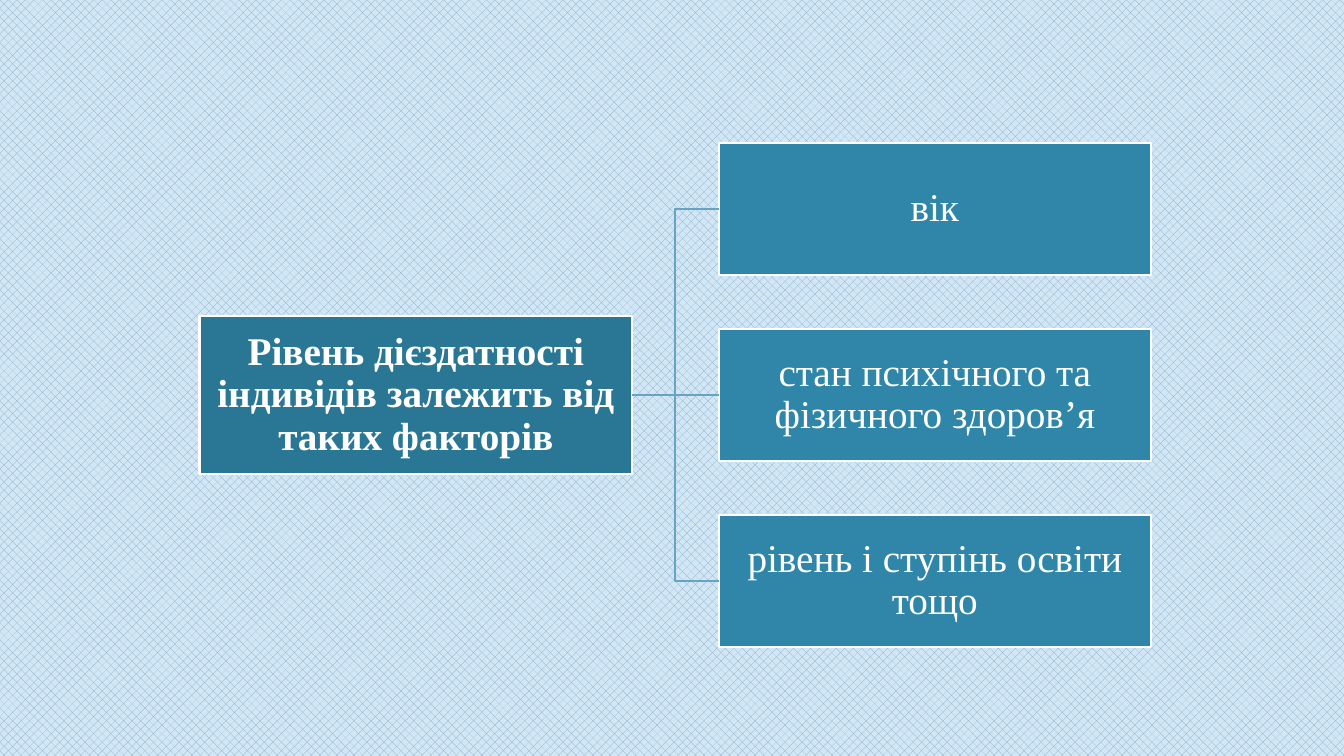
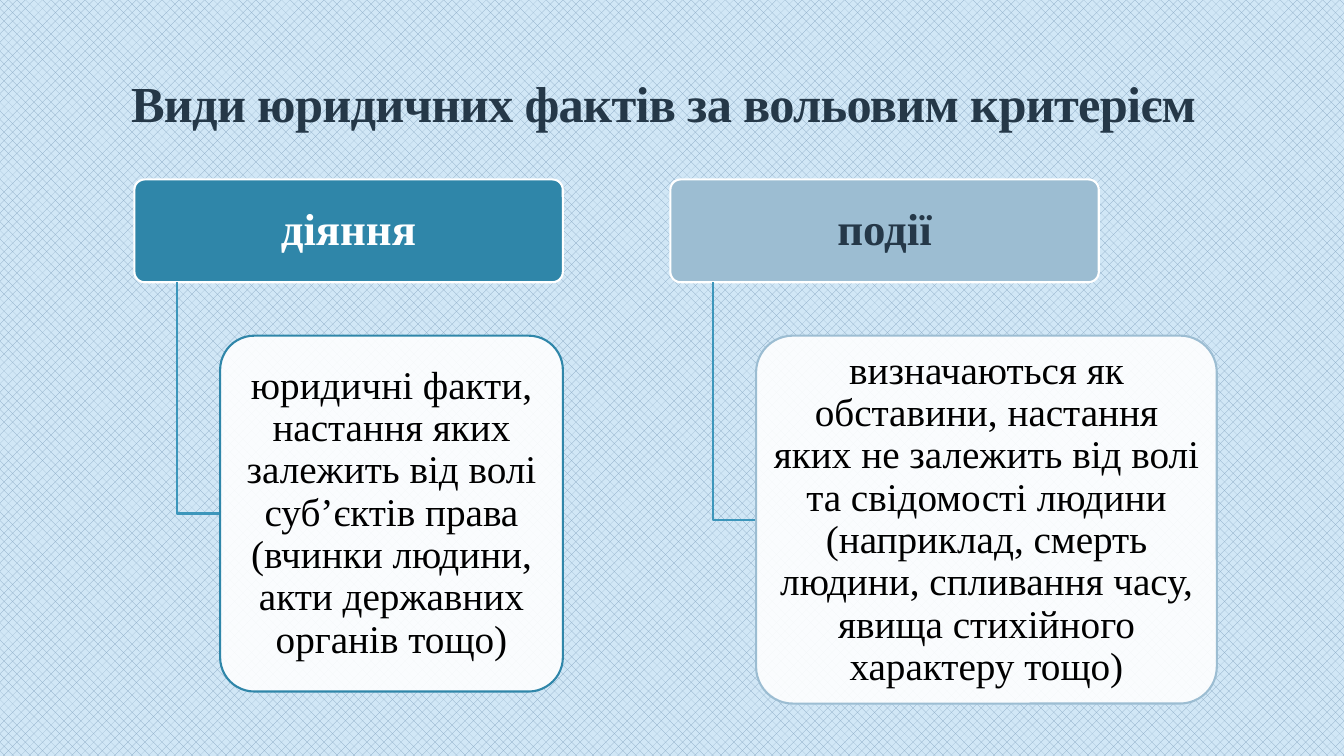
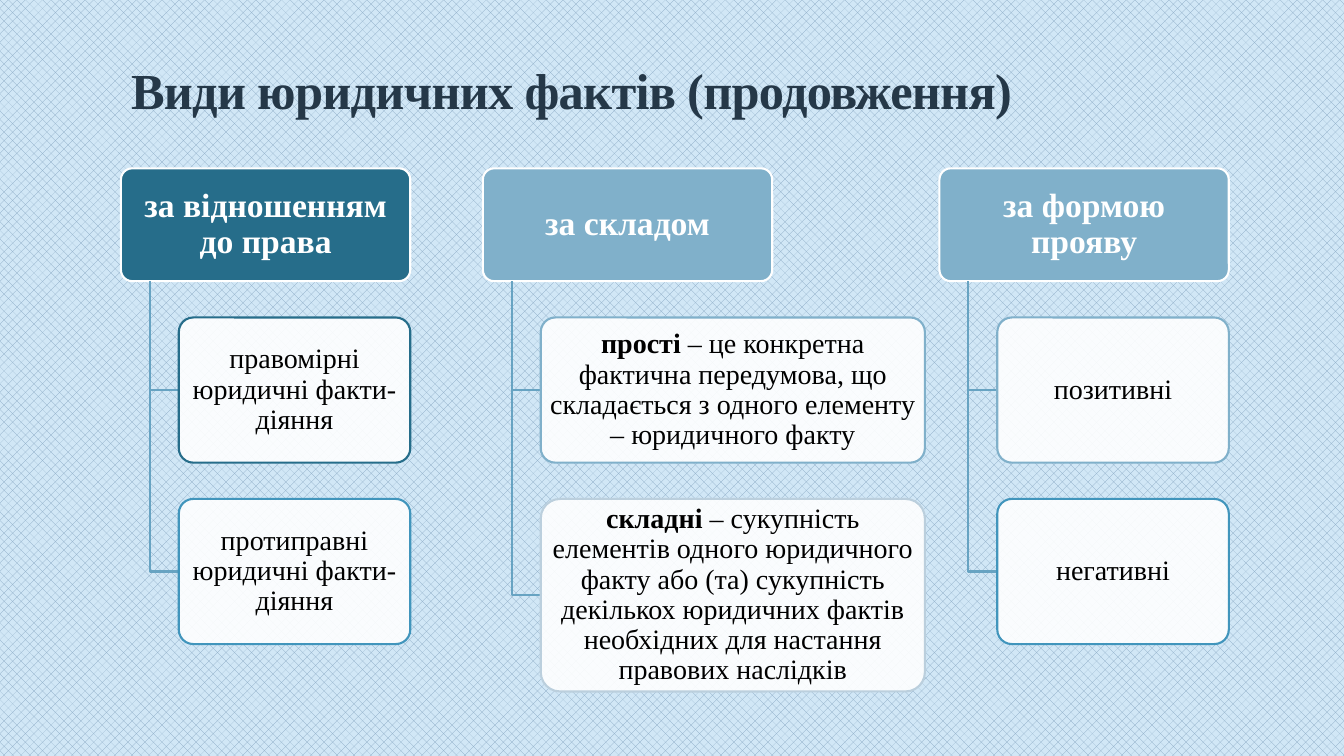
import dataclasses

import pptx
import pptx.dml.color
import pptx.enum.dml
import pptx.enum.shapes
import pptx.enum.text
import pptx.oxml
import pptx.oxml.ns
import pptx.util

RECTANGLE = pptx.enum.shapes.MSO_SHAPE.RECTANGLE
ROUNDED = pptx.enum.shapes.MSO_SHAPE.ROUNDED_RECTANGLE
CONNECTOR = pptx.enum.shapes.MSO_CONNECTOR


@dataclasses.dataclass(frozen=True)
class Theme:
    font: str = "Times New Roman"
    title_size: int = 36
    heading_size: int = 32
    text_size: int = 28
    subheading_size: int = 24
    small_size: int = 20
    line_width: float = 1.5
    white: str = "FFFFFF"
    black: str = "000000"
    ink: str = "253848"
    background: str = "D1E7F6"
    hatch: str = "86A6C1"
    root: str = "2A7795"
    teal: str = "2F86A9"
    deep_teal: str = "266D8A"
    mist: str = "9CBDD2"
    sky: str = "80B0CA"
    azure: str = "4195BC"
    pale: str = "BBCFDD"
    link: str = "67A3C2"
    strong_link: str = "3C96BB"


THEME = Theme()
SLIDE_WIDTH = pptx.util.Inches(13.33)
SLIDE_HEIGHT = pptx.util.Inches(7.5)


@dataclasses.dataclass(frozen=True)
class Box:
    """A region in percent of the slide's width and height."""
    left: float
    top: float
    width: float
    height: float

    def emu(self):
        return (across(self.left), down(self.top),
                across(self.width), down(self.height))


@dataclasses.dataclass(frozen=True)
class Leaf:
    text: str
    line: str
    height: float
    width: float = 0  # 0 means 80 % of the heading's width
    lead: str = ""    # bold opening words


def across(percent):
    return round(SLIDE_WIDTH * percent / 100)


def down(percent):
    return round(SLIDE_HEIGHT * percent / 100)


def color(value):
    return pptx.dml.color.RGBColor.from_string(value)


def format_run(run, size, font_color, bold=False):
    run.font.name = THEME.font
    run.font.size = pptx.util.Pt(size)
    run.font.color.rgb = color(font_color)
    run.font.bold = bold


def style_line(shape, line_color):
    shape.line.color.rgb = color(line_color)
    shape.line.width = pptx.util.Pt(THEME.line_width)


def add_node(slide, kind, box, text, size, fill, line=THEME.white,
             font_color=THEME.white, bold=False, lead="", inset=0.05, opacity=100):
    """A filled box with centred text, optionally opening with bold words."""
    shape = slide.shapes.add_shape(kind, *box.emu())
    shape.shadow.inherit = False
    if kind == ROUNDED:
        shape.adjustments[0] = 0.1
    shape.fill.solid()
    shape.fill.fore_color.rgb = color(fill)
    if opacity < 100:
        solid = shape._element.spPr.find(pptx.oxml.ns.qn("a:solidFill"))
        alpha = pptx.oxml.parse_xml(
            f'<a:alpha {pptx.oxml.ns.nsdecls("a")} val="{opacity * 1000}"/>')
        solid[0].append(alpha)
    style_line(shape, line)

    frame = shape.text_frame
    frame.word_wrap = True
    frame.vertical_anchor = pptx.enum.text.MSO_ANCHOR.MIDDLE
    frame.margin_left = frame.margin_right = pptx.util.Inches(inset)
    frame.margin_top = frame.margin_bottom = pptx.util.Inches(min(inset, 0.03))
    paragraph = frame.paragraphs[0]
    paragraph.alignment = pptx.enum.text.PP_ALIGN.CENTER
    paragraph.line_spacing = 0.9
    for words, is_bold in ((lead, True), (text, bold)):
        if words:
            run = paragraph.add_run()
            run.text = words
            format_run(run, size, font_color, is_bold)
    return shape


def connect(slide, parent, child, kind):
    """Join the parent's right side to the child's left side."""
    connector = slide.shapes.add_connector(kind, 0, 0, 0, 0)
    connector.begin_connect(parent, 3)
    connector.end_connect(child, 1)
    style_line(connector, THEME.link)
    connector._element.spPr.append(
        pptx.oxml.parse_xml(f'<a:effectLst {pptx.oxml.ns.nsdecls("a")}/>'))


def add_branch(slide, x, top, right, bottom, line_color):
    """An angled line that runs down and then right."""
    builder = slide.shapes.build_freeform(x, top)
    builder.add_line_segments([(x, bottom), (right, bottom)], close=False)
    branch = builder.convert_to_shape()
    branch.shadow.inherit = False
    branch.fill.background()
    style_line(branch, line_color)


def add_title(slide, text, height):
    title = slide.shapes.title
    title.left, title.top, title.width, title.height = Box(9, 4.13, 82.5, height).emu()
    frame = title.text_frame
    frame.text = text
    frame.word_wrap = True
    frame.auto_size = pptx.enum.text.MSO_AUTO_SIZE.NONE
    frame.vertical_anchor = pptx.enum.text.MSO_ANCHOR.BOTTOM
    paragraph = frame.paragraphs[0]
    paragraph.alignment = pptx.enum.text.PP_ALIGN.LEFT
    paragraph.line_spacing = 0.85
    run = paragraph.runs[0]
    format_run(run, THEME.title_size, THEME.ink, bold=True)
    run.font._element.set("spc", "-50")


def add_factor_chart(slide, box, root_text, factors):
    """One root on the left, equal factors stacked on the right."""
    width = box.width / 2.2
    gap_share = 0.405
    height = box.height / (len(factors) + gap_share * (len(factors) - 1))
    root_height = height * 1.2
    root_box = Box(box.left, box.top + (box.height - root_height) / 2,
                   width, root_height)
    root = add_node(slide, RECTANGLE, root_box, root_text, THEME.text_size,
                    THEME.root, bold=True, inset=0.02)
    for index, factor in enumerate(factors):
        factor_box = Box(box.left + width * 1.2,
                         box.top + index * height * (1 + gap_share), width, height)
        node = add_node(slide, RECTANGLE, factor_box, factor, THEME.text_size,
                        THEME.teal, inset=0.02)
        is_middle = 2 * index == len(factors) - 1
        connect(slide, root, node, CONNECTOR.STRAIGHT if is_middle else CONNECTOR.ELBOW)


def add_tree(slide, box, heading, fill, leaves, gap, sizes, link,
             font_color=THEME.white):
    """A heading in the given box with leaves hanging below it."""
    heading_size, leaf_size = sizes
    add_node(slide, ROUNDED, box, heading, heading_size, fill,
             font_color=font_color, bold=True)
    heading_bottom = box.top + box.height
    leaf_left = box.left + 0.2 * box.width
    leaf_top = heading_bottom + gap
    for leaf in leaves:
        add_branch(slide, across(box.left + 0.1 * box.width), down(heading_bottom),
                   across(leaf_left), down(leaf_top + leaf.height / 2), link)
        leaf_box = Box(leaf_left, leaf_top, leaf.width or 0.8 * box.width, leaf.height)
        add_node(slide, ROUNDED, leaf_box, leaf.text, leaf_size, THEME.white,
                 line=leaf.line, font_color=THEME.black, lead=leaf.lead,
                 inset=0.06 if leaf_size == THEME.text_size else 0.04, opacity=90)
        leaf_top += leaf.height + gap


def build_factors_slide(presentation):
    slide = presentation.slides.add_slide(presentation.slide_layouts[6])
    add_factor_chart(slide, Box(14.85, 18.93, 70.8, 66.67),
                     "Рівень дієздатності індивідів залежить від таких факторів",
                     ["вік", "стан психічного та фізичного здоров’я",
                      "рівень і ступінь освіти тощо"])


def build_trees_slide(presentation, title, title_height, first, lefts, trees, **style):
    """A title over trees whose headings share one size and row."""
    slide = presentation.slides.add_slide(presentation.slide_layouts[5])
    add_title(slide, title, title_height)
    for left, (heading, fill, font_color, leaves) in zip(lefts, trees):
        add_tree(slide, dataclasses.replace(first, left=left), heading, fill,
                 leaves, font_color=font_color, **style)


def main():
    presentation = pptx.Presentation()
    presentation.slide_width = SLIDE_WIDTH
    presentation.slide_height = SLIDE_HEIGHT

    # Shared hatched background
    fill = presentation.slide_master.background.fill
    fill.patterned()
    fill.pattern = pptx.enum.dml.MSO_PATTERN.from_xml("pct40")
    fill.fore_color.rgb = color(THEME.hatch)
    fill.back_color.rgb = color(THEME.background)

    build_factors_slide(presentation)

    # Kinds by the criterion of will
    build_trees_slide(
        presentation, "Види юридичних фактів за вольовим критерієм", 14.13,
        Box(10, 23.73, 31.88, 13.6), (10, 49.88),
        [("діяння", THEME.teal, THEME.white, [
            Leaf("юридичні факти, настання яких залежить від волі суб’єктів права "
                 "(вчинки людини, акти державних органів тощо)", THEME.teal, 47.07)]),
         ("події", THEME.mist, THEME.ink, [
             Leaf("визначаються як обставини, настання яких не залежить від волі та "
                  "свідомості людини (наприклад, смерть людини, спливання часу, "
                  "явища стихійного характеру тощо)", THEME.mist, 48.67, 34.28)])],
        gap=7.07, sizes=(THEME.heading_size, THEME.text_size), link=THEME.strong_link)

    # Further kinds, two leaves under each heading
    row, wide = 19.2, 28.58
    build_trees_slide(
        presentation, "Види юридичних фактів (продовження)", 12.4,
        Box(9, 22.27, 21.53, 14.93), (9, 35.93, 69.9),
        [("за відношенням до права", THEME.deep_teal, THEME.white, [
            Leaf("правомірні юридичні факти-діяння", THEME.deep_teal, row),
            Leaf("протиправні юридичні факти-діяння", THEME.azure, row)]),
         ("за складом", THEME.sky, THEME.white, [
             Leaf(" – це конкретна фактична передумова, що складається з одного "
                  "елементу – юридичного факту", THEME.sky, row, wide, "прості"),
             Leaf(" – сукупність елементів одного юридичного факту або (та) "
                  "сукупність декількох юридичних фактів необхідних для настання "
                  "правових наслідків", THEME.pale, 25.47, wide, "складні")]),
         ("за формою прояву", THEME.sky, THEME.white, [
             Leaf("позитивні", THEME.sky, row),
             Leaf("негативні", THEME.azure, row)])],
        gap=4.8, sizes=(THEME.subheading_size, THEME.small_size), link=THEME.link)

    presentation.save("out.pptx")


if __name__ == "__main__":
    main()
